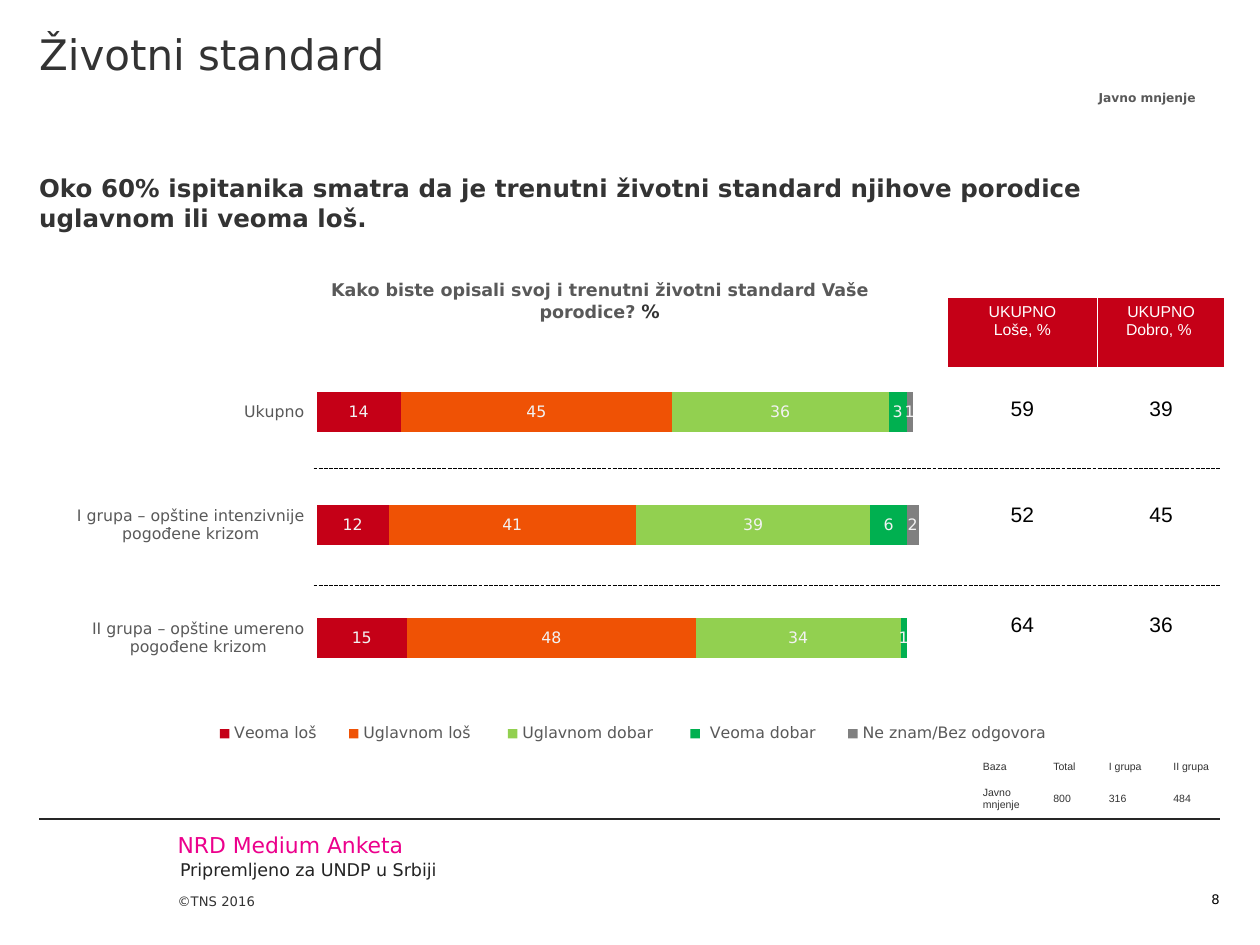
from lxml.etree import SubElement
from pptx import Presentation
from pptx.chart.data import CategoryChartData
from pptx.dml.color import RGBColor
from pptx.enum.chart import XL_CHART_TYPE, XL_LEGEND_POSITION
from pptx.enum.dml import MSO_LINE
from pptx.enum.shapes import MSO_CONNECTOR
from pptx.enum.text import MSO_ANCHOR, PP_ALIGN
from pptx.oxml.ns import qn
from pptx.util import Cm, Pt

FONT = "DejaVu Sans"
TABLE_FONT = "Arial"
COLORS = {
    "text": "333333", "muted": "595959", "footer": "232323", "rule": "262626",
    "black": "000000", "white": "FFFFFF", "label": "F2F2F2", "pink": "EC008C",
    "very_bad": "C50017", "bad": "EF5205", "good": "92D050",
    "very_good": "00B050", "unknown": "808080",
}
LEFT, RIGHT = 0.79, 24.59
WIDTH = RIGHT - LEFT

CATEGORIES = [
    "Ukupno",
    "I grupa – opštine intenzivnije pogođene krizom",
    "II grupa – opštine umereno pogođene krizom",
]
SERIES = [
    ("Veoma loš", (14, 12, 15), "very_bad"),
    ("Uglavnom loš ", (45, 41, 48), "bad"),
    ("Uglavnom dobar ", (36, 39, 34), "good"),
    (" Veoma dobar", (3, 6, 1), "very_good"),
    ("Ne znam/Bez odgovora ", (1, 2, 0), "unknown"),
]
TOTALS = [["UKUPNO\nLoše, %", "UKUPNO\nDobro, % "],
          ["59", "39"], ["52", "45"], ["64", "36"]]
BASE = [["Baza", "Total", "I grupa", "II grupa"],
        ["Javno mnjenje", "800", "316", "484"]]


def rgb(name):
    return RGBColor.from_string(COLORS[name])


def style_font(font, size, color, name=FONT, bold=False):
    font.name, font.size, font.bold = name, Pt(size), bold
    font.color.rgb = rgb(color)


def add_text(slide, box, runs, align=PP_ALIGN.LEFT, anchor=MSO_ANCHOR.TOP,
             margins=(0, 0), wrap=True, spacing=None):
    """Add a one-paragraph text box; runs are (text, size, color, bold)."""
    tf = slide.shapes.add_textbox(*map(Cm, box)).text_frame
    tf.word_wrap = wrap
    tf.vertical_anchor = anchor
    tf.margin_left = tf.margin_right = Cm(margins[0])
    tf.margin_top, tf.margin_bottom = Cm(margins[1]), 0
    p = tf.paragraphs[0]
    p.alignment = align
    if spacing:
        p.line_spacing = spacing
    for text, size, color, bold in runs:
        r = p.add_run()
        r.text = text
        style_font(r.font, size, color, bold=bold)


def add_line(slide, x, y, color, dash=None):
    """Add a horizontal line from x to the right margin."""
    line = slide.shapes.add_connector(
        MSO_CONNECTOR.STRAIGHT, Cm(x), Cm(y), Cm(RIGHT), Cm(y))
    line.line.color.rgb = rgb(color)
    line.line.width = Pt(0.75)
    if dash:
        line.line.dash_style = dash
    SubElement(line._element.spPr, qn("a:effectLst"))


def set_borders(cell, color):
    tcPr = cell._tc.get_or_add_tcPr()
    for i, side in enumerate(("lnL", "lnR", "lnT", "lnB")):
        ln = tcPr.makeelement(qn(f"a:{side}"), {"w": str(Pt(1))})
        fill = SubElement(ln, qn("a:solidFill"))
        SubElement(fill, qn("a:srgbClr"), val=COLORS[color])
        tcPr.insert(i, ln)


def fill_cell(cell, text, size, color, align, fill=None):
    if fill:
        cell.fill.solid()
        cell.fill.fore_color.rgb = rgb(fill)
    else:
        cell.fill.background()
        cell.vertical_anchor = MSO_ANCHOR.MIDDLE
    set_borders(cell, "white")
    tf = cell.text_frame
    for i, line in enumerate(text.split("\n")):
        p = tf.add_paragraph() if i else tf.paragraphs[0]
        p.alignment = align
        r = p.add_run()
        r.text = line
        style_font(r.font, size, color, TABLE_FONT)


def add_table(slide, x, y, widths, heights, rows, body, header=None,
              align=PP_ALIGN.LEFT):
    """Add a table; body and header are (size, color[, fill]) styles."""
    table = slide.shapes.add_table(
        len(rows), len(widths), Cm(x), Cm(y),
        Cm(sum(widths)), Cm(sum(heights))).table
    table.first_row = table.horz_banding = False
    for column, width in zip(table.columns, widths):
        column.width = Cm(width)
    for i, (texts, height) in enumerate(zip(rows, heights)):
        table.rows[i].height = Cm(height)
        size, color, *fill = header if header and i == 0 else body
        for j, text in enumerate(texts):
            fill_cell(table.cell(i, j), text, size, color, align, *fill)


def set_layout(element, x, y, w, h, inner=False):
    """Place a chart part by fractions of the chart area."""
    for old in element.findall(qn("c:layout")):
        element.remove(old)
    layout = element.makeelement(qn("c:layout"), {})
    manual = SubElement(layout, qn("c:manualLayout"))
    if inner:
        SubElement(manual, qn("c:layoutTarget"), val="inner")
    for tag in ("xMode", "yMode"):
        SubElement(manual, qn(f"c:{tag}"), val="edge")
    for tag, value in zip("xywh", (x, y, w, h)):
        SubElement(manual, qn(f"c:{tag}"), val=str(value))
    position = element.find(qn("c:legendPos"))
    element.insert(0 if position is None else 1, layout)


def add_standard_chart(slide):
    data = CategoryChartData(number_format="0")
    data.categories = CATEGORIES
    for name, values, _ in SERIES:
        data.add_series(name, values)
    chart = slide.shapes.add_chart(
        XL_CHART_TYPE.BAR_STACKED, Cm(LEFT), Cm(6.1), Cm(WIDTH), Cm(10.41),
        data).chart
    style_font(chart.font, 10, "black")
    chart.has_title = False

    plot = chart.plots[0]
    plot.gap_width, plot.overlap = 182, 100
    plot.vary_by_categories = False
    for series, (_, _, color) in zip(plot.series, SERIES):
        series.format.fill.solid()
        series.format.fill.fore_color.rgb = rgb(color)
        labels = series.data_labels
        labels.show_value = True
        labels.number_format = "0;;"  # zero stays unlabelled
        labels.number_format_is_linked = False
        style_font(labels.font, 9, "label")

    axis = chart.category_axis
    axis.reverse_order = True
    axis.format.line.fill.background()
    style_font(axis.tick_labels.font, 9, "muted")
    values = chart.value_axis
    values.minimum_scale, values.maximum_scale = 0, 100
    values.has_major_gridlines = False
    values.visible = False

    chart.has_legend = True
    chart.legend.position = XL_LEGEND_POSITION.BOTTOM
    chart.legend.include_in_layout = False
    style_font(chart.legend.font, 9, "muted")
    set_layout(chart.legend._element, 0.13, 0.8, 0.75, 0.07)
    plot_area = chart._chartSpace.chart.plotArea
    set_layout(plot_area, 0.235, 0.103, 0.51, 0.656, inner=True)


def add_footer(slide):
    add_line(slide, LEFT, 16.51, "rule")
    add_text(slide, (3.58, 16.76, 8.41, 0.53),
             [("NRD Medium Anketa", 12.5, "pink", False)])
    add_text(slide, (3.63, 17.32, 17.3, 0.5),
             [("Pripremljeno za UNDP u Srbiji", 10, "footer", False)])
    add_text(slide, (3.58, 17.58, 2.11, 0.74),
             [("©TNS 2016", 7.5, "text", False)], anchor=MSO_ANCHOR.BOTTOM)
    add_text(slide, (23.19, 17.58, 1.4, 0.71), [("8", 7.5, "black", False)],
             align=PP_ALIGN.RIGHT, anchor=MSO_ANCHOR.BOTTOM)


def main():
    prs = Presentation()
    prs.slide_width, prs.slide_height = Cm(25.4), Cm(19.05)
    slide = prs.slides.add_slide(prs.slide_layouts[6])

    add_footer(slide)
    add_text(slide, (LEFT, 0, WIDTH, 2.87),
             [("Životni standard", 24, "text", False)], margins=(0, 0.58))
    add_standard_chart(slide)
    add_text(slide, (LEFT, 2.87, WIDTH, 2.11),
             [("Oko 60% ispitanika smatra da je trenutni životni standard "
               "njihove porodice uglavnom ili veoma loš.", 14, "text", True)],
             margins=(0, 0.58), spacing=1.05)
    add_table(slide, 19.1, 5.99, (3.02, 2.57), (1.42, 1.68, 2.57, 1.88),
              TOTALS, body=(12, "black"), header=(9, "white", "very_bad"),
              align=PP_ALIGN.CENTER)
    for y in (9.45, 11.81):
        add_line(slide, 6.32, y, "black", MSO_LINE.SQUARE_DOT)
    add_text(slide, (5.74, 5.49, 12.7, 1.14),
             [("Kako biste opisali svoj i trenutni životni standard Vaše "
               "porodice? ", 10, "muted", True), ("%", 10.5, "text", True)],
             align=PP_ALIGN.CENTER, margins=(0.25, 0.13))
    add_table(slide, 19.56, 15.21, (1.42, 1.12, 1.3, 1.42), (0.46, 0.66),
              BASE, body=(6, "text"))
    add_text(slide, (21.84, 1.7, 2.57, 0.56),
             [("Javno mnjenje", 7, "muted", True)], align=PP_ALIGN.CENTER,
             margins=(0.25, 0.13), wrap=False)
    prs.save("out.pptx")


if __name__ == "__main__":
    main()
